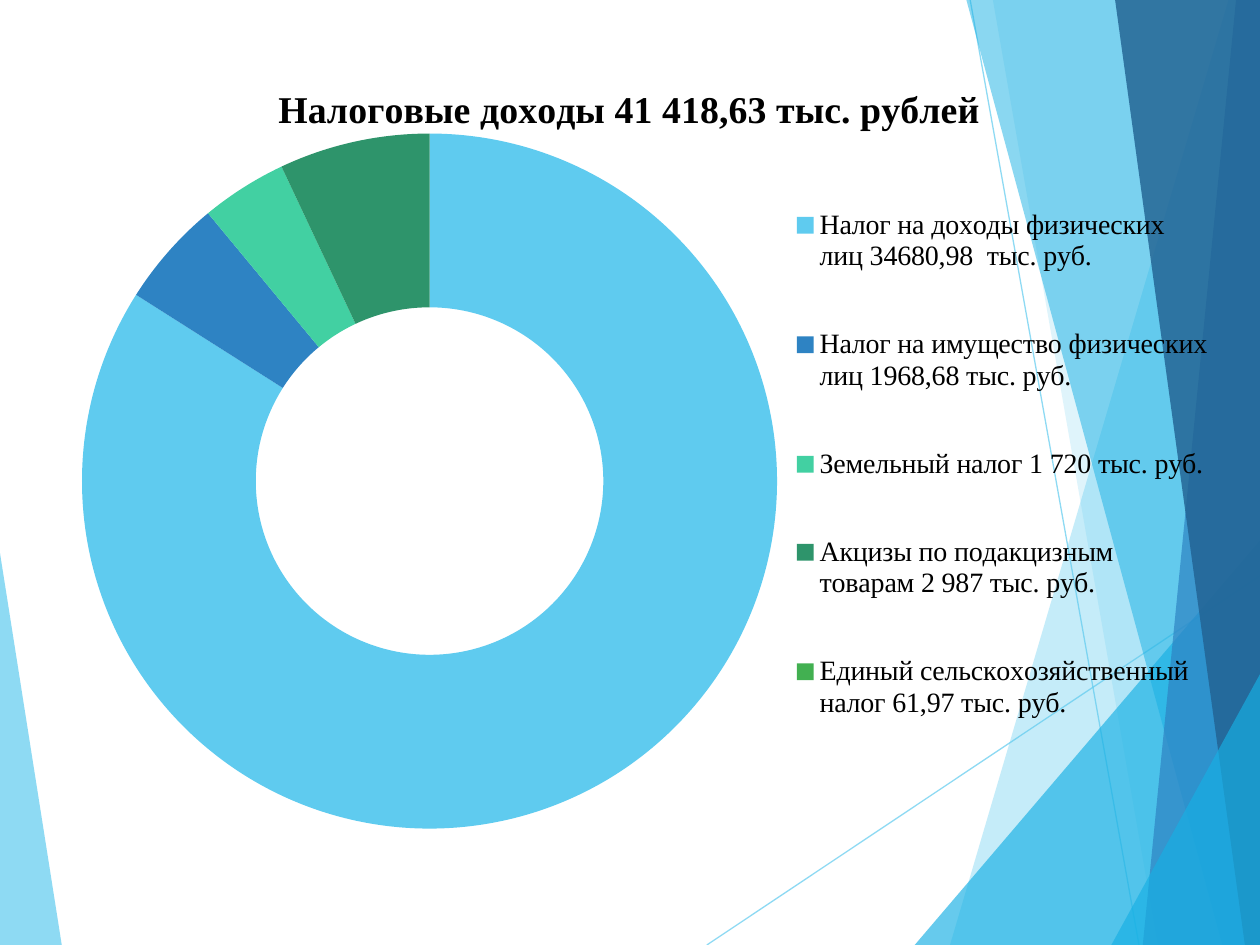
from lxml import etree
from pptx import Presentation
from pptx.chart.data import CategoryChartData
from pptx.dml.color import RGBColor
from pptx.enum.chart import XL_CHART_TYPE, XL_LEGEND_POSITION
from pptx.enum.shapes import MSO_CONNECTOR
from pptx.oxml import parse_xml
from pptx.oxml.ns import nsdecls, qn
from pptx.util import Inches, Pt

DOUGHNUT = XL_CHART_TYPE.DOUGHNUT
LEGEND_RIGHT = XL_LEGEND_POSITION.RIGHT
STRAIGHT = MSO_CONNECTOR.STRAIGHT

# Grid: square one-inch cells, each split into fine steps for outlines
COLS, ROWS = 10, 7.5
CELL = Inches(1)
STEPS = 100

SKY, AZURE, BLUE, NAVY = "5FCBEF", "17B0E4", "2E83C3", "226292"

# Facets from back to front: corners (column, row), colour, opacity in percent
LEFT_FACET = ([(0, 4.39), (0.49, ROWS), (0, ROWS)], SKY, 70)
RIGHT_FACETS = [
    ([(9.75, 0), (7.54, ROWS), (COLS, ROWS), (COLS, 0)], SKY, 36),
    ([(7.88, 0), (9.19, ROWS), (COLS, ROWS), (COLS, 0)], SKY, 20),
    ([(7.26, ROWS), (COLS, 4.29), (COLS, ROWS)], AZURE, 66),
    ([(7.67, 0), (9.7, ROWS), (COLS, ROWS), (COLS, 0)], AZURE, 50),
    ([(9.81, 0), (9.07, ROWS), (COLS, ROWS), (COLS, 0)], BLUE, 70),
    ([(8.85, 0), (9.88, ROWS), (COLS, ROWS), (COLS, 0)], NAVY, 82),
    ([(8.82, ROWS), (COLS, 5.35), (COLS, ROWS)], AZURE, 66),
]
RAYS = [((5.61, ROWS), (COLS, 4.57)), ((7.7, 0), (9.04, ROWS))]

# Tax name, share of the revenue in percent, slice colour
TAXES = [
    ("Налог на доходы физических лиц 34680,98  тыс. руб.", 84, SKY),
    ("Налог на имущество физических лиц 1968,68 тыс. руб.", 5, BLUE),
    ("Земельный налог 1 720 тыс. руб.", 4, "42D0A2"),
    ("Акцизы по подакцизным товарам 2 987 тыс. руб.", 7, "2E946B"),
    ("Единый сельскохозяйственный налог 61,97 тыс. руб.", 0, "42B051"),
]


def rgb(hex_colour):
    return RGBColor.from_string(hex_colour)


def set_opacity(properties, percent):
    colour = next(properties.iter(qn("a:srgbClr")))
    etree.SubElement(colour, qn("a:alpha")).set("val", str(percent * 1000))


def format_font(font, size, bold=False, colour="000000", name="Times New Roman"):
    font.name, font.size, font.bold = name, Pt(size), bold
    font.color.rgb = rgb(colour)


def write_text(frame, text, **style):
    frame.text = text
    format_font(frame.paragraphs[0].runs[0].font, **style)


def place_inside_chart(element, x, y, w, h, inner=False):
    """Give a plot area or a legend a fixed place, in shares of the chart."""
    target = '<c:layoutTarget val="inner"/>' if inner else ""
    places = "".join(f'<c:{tag} val="{share}"/>'
                     for tag, share in zip("xywh", (x, y, w, h)))
    layout = parse_xml(
        f'<c:layout {nsdecls("c")}><c:manualLayout>{target}'
        f'<c:xMode val="edge"/><c:yMode val="edge"/>{places}'
        "</c:manualLayout></c:layout>")
    for old in element.findall(qn("c:layout")):
        element.remove(old)
    position = element.find(qn("c:legendPos"))
    if position is None:
        element.insert(0, layout)
    else:
        position.addnext(layout)


class SlideBuilder:
    def __init__(self, slide):
        self.slide = slide
        self.shapes = slide.shapes
        self.ray_colour, self.ray_width, self.ray_opacity = SKY, 0.75, 70
        self.text_size, self.legend_size, self.title_size = 18, 16, 21.6

    def facet(self, corners, colour, opacity):
        first, *others = [(round(x * STEPS), round(y * STEPS)) for x, y in corners]
        outline = self.shapes.build_freeform(*first, scale=CELL / STEPS)
        outline.add_line_segments(others, close=True)
        facet = outline.convert_to_shape()
        facet.shadow.inherit = False
        facet.fill.solid()
        facet.fill.fore_color.rgb = rgb(colour)
        set_opacity(facet._element.spPr, opacity)
        facet.line.fill.background()

    def ray(self, start, end):
        ends = [int(place * CELL) for place in (*start, *end)]
        ray = self.shapes.add_connector(STRAIGHT, *ends)
        ray.line.color.rgb = rgb(self.ray_colour)
        ray.line.width = Pt(self.ray_width)
        properties = ray._element.spPr
        set_opacity(properties, self.ray_opacity)
        etree.SubElement(properties, qn("a:effectLst"))

    def doughnut(self, title, taxes, left, top, width, height):
        names, shares, colours = zip(*taxes)
        data = CategoryChartData()
        data.categories = names
        data.add_series("Series 1", shares)
        box = [int(length * CELL) for length in (left, top, width, height)]
        chart = self.shapes.add_chart(DOUGHNUT, *box, data).chart
        format_font(chart.font, self.text_size)

        # Title
        chart.has_title = True
        write_text(chart.chart_title.text_frame, title, size=self.title_size, bold=True)
        chart.chart_title.include_in_layout = False

        # Ring
        ring = chart.plots[0]
        ring.vary_by_categories = True
        for index, colour in enumerate(colours):
            piece = ring.series[0].points[index].format
            piece.fill.solid()
            piece.fill.fore_color.rgb = rgb(colour)
            piece.line.fill.background()
        plot_area = chart._chartSpace.chart.plotArea
        place_inside_chart(plot_area, 0.032, 0.096, 0.589, 0.854, inner=True)

        # Legend
        chart.has_legend = True
        chart.legend.position = LEGEND_RIGHT
        chart.legend.include_in_layout = False
        format_font(chart.legend.font, self.legend_size)
        place_inside_chart(chart.legend._element, 0.636, 0.12, 0.351, 0.765)


def main():
    deck = Presentation()
    deck.slide_width, deck.slide_height = int(COLS * CELL), int(ROWS * CELL)
    blank = deck.slide_layouts[6]
    builder = SlideBuilder(deck.slides.add_slide(blank))

    # Background facets and rays
    builder.facet(*LEFT_FACET)
    for ray in RAYS:
        builder.ray(*ray)
    for facet in RIGHT_FACETS:
        builder.facet(*facet)

    # Tax revenue chart
    builder.doughnut("Налоговые доходы 41 418,63 тыс. рублей ", TAXES,
                     left=0.35, top=0.44, width=9.37, height=6.46)

    deck.save("out.pptx")


if __name__ == "__main__":
    main()
